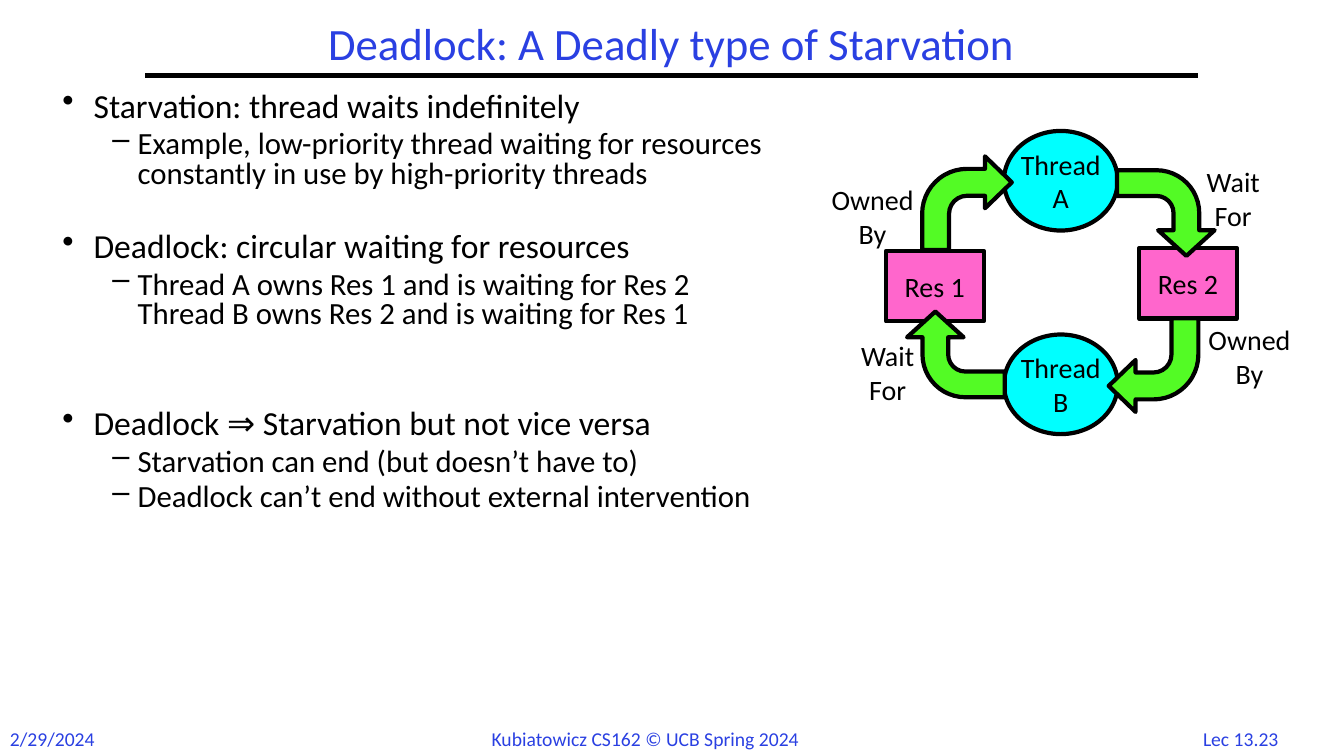
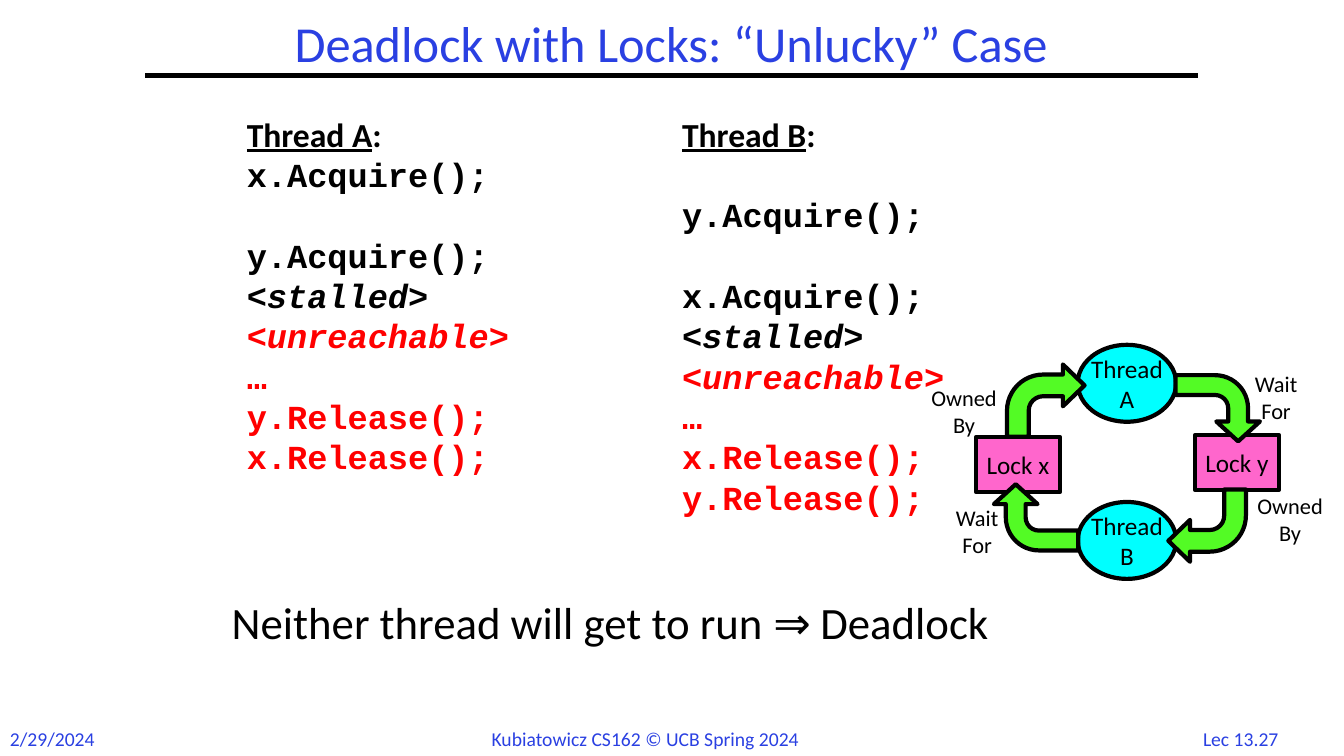
import pptx
import pptx.dml.color
import pptx.enum.shapes
import pptx.enum.text
import pptx.oxml.ns
import pptx.util
from lxml import etree

Cm = pptx.util.Cm
Pt = pptx.util.Pt
RGBColor = pptx.dml.color.RGBColor
SHAPE = pptx.enum.shapes.MSO_SHAPE
ALIGN = pptx.enum.text.PP_ALIGN
ANCHOR = pptx.enum.text.MSO_ANCHOR
qn = pptx.oxml.ns.qn

BLUE = RGBColor(0x2A, 0x40, 0xE2)
BLACK = RGBColor(0, 0, 0)
RED = RGBColor(0xFF, 0, 0)
PINK = RGBColor(0xFF, 0x66, 0xCC)
CYAN = RGBColor(0, 0xFF, 0xFF)
GREEN = RGBColor(0x53, 0xFB, 0x25)

TEXT_FONT = "Calibri"
CODE_FONT = "Courier New"
OUTLINE = Pt(3)
CODE_PITCH = Pt(28.8)

# Cycle diagram in cm, measured from the left of the first resource
# and the top of thread A: left, top, width, height
RESOURCE_BOXES = [(0, 3.02, 2.46, 1.78), (6.38, 2.95, 2.46, 1.78)]
THREAD_BOXES = [("A", (2.97, 0, 2.87, 2.51)), ("B", (2.97, 5.13, 2.87, 2.51))]
ARROWS = [
    (0, (0.91, 0.64, 2.26, 2.36)),
    (90, (5.82, 0.99, 2.46, 2.16)),
    (180, (5.61, 4.72, 2.26, 2.36)),
    (270, (0.53, 4.55, 2.46, 2.16)),
]
# Centres of the labels
LABELS = [
    ("Wait\nFor", 8.75, 1.69),
    ("Wait\nFor", 0.04, 6.08),
    ("Owned\nBy", 9.16, 5.68),
    ("Owned\nBy", -0.34, 2.15),
]
LABEL_WIDTH, LABEL_HEIGHT = 2.8, 1.96

# Text, level, space before in points
STARVATION_POINTS = [
    ("Starvation: thread waits indefinitely", 0, 4.8),
    ("Example, low-priority thread waiting for resources constantly in use "
     "by high-priority threads", 1, 4.4),
    ("Deadlock: circular waiting for resources", 0, 30.7),
    ("Thread A owns Res 1 and is waiting for Res 2\v"
     "Thread B owns Res 2 and is waiting for Res 1", 1, 4.4),
    ("Deadlock ⇒ Starvation but not vice versa", 0, 56.6),
    ("Starvation can end (but doesn’t have to)", 1, 4.4),
    ("Deadlock can’t end without external intervention", 1, 4.4),
]
# Bullet, size, left margin and hanging indent of each level
LEVELS = [("•", 24, Cm(0.79), Cm(0.79)), ("–", 22, Cm(1.9), Cm(0.64))]


def style_runs(paragraph, size, color=BLACK, font=TEXT_FONT, bold=False, italic=False):
    for run in paragraph.runs:
        run.font.size = Pt(size)
        run.font.name = font
        run.font.color.rgb = color
        run.font.bold = bold
        run.font.italic = italic


def write_text(shape, text, size, color=BLACK, align=ALIGN.CENTER, wrap=False):
    frame = shape.text_frame
    frame.text = text
    frame.word_wrap = wrap
    frame.vertical_anchor = ANCHOR.MIDDLE
    for paragraph in frame.paragraphs:
        paragraph.alignment = align
        style_runs(paragraph, size, color)


def add_text(slide, box, text, size, color=BLACK, align=ALIGN.LEFT):
    textbox = slide.shapes.add_textbox(*map(Cm, box))
    write_text(textbox, text, size, color, align, wrap=True)
    return textbox


def add_outlined(slide, kind, box, fill):
    shape = slide.shapes.add_shape(kind, *map(Cm, box))
    shape.shadow.inherit = False
    shape.fill.solid()
    shape.fill.fore_color.rgb = fill
    shape.line.color.rgb = BLACK
    shape.line.width = OUTLINE
    return shape


def add_bent_arrow(slide, box, rotation):
    """Add an arrow whose box is the area covered after rotation."""
    left, top, width, height = box
    sideways = rotation % 180 == 90
    if sideways:
        shift = (width - height) / 2
        left, top, width, height = left + shift, top - shift, height, width
    arrow = add_outlined(slide, SHAPE.BENT_ARROW, (left, top, width, height), GREEN)
    arrow.rotation = rotation
    half_head = 0.33 if sideways else 0.29
    for index, value in enumerate((0.3, half_head, 0.3, 0.5)):
        arrow.adjustments[index] = value


def add_cycle(slide, origin, scale, resources, node_size, label_size):
    def place(left, top, width, height):
        return (origin[0] + left * scale[0], origin[1] + top * scale[1],
                width * scale[0], height * scale[1])

    for name, box in zip(resources, RESOURCE_BOXES):
        resource = add_outlined(slide, SHAPE.RECTANGLE, place(*box), PINK)
        write_text(resource, name, node_size)
    for letter, box in THREAD_BOXES:
        thread = add_outlined(slide, SHAPE.OVAL, place(*box), CYAN)
        write_text(thread, f"Thread\n{letter}", node_size)
    for rotation, box in ARROWS:
        add_bent_arrow(slide, place(*box), rotation)
    for text, x, y in LABELS:
        box = place(x - LABEL_WIDTH / 2, y - LABEL_HEIGHT / 2, LABEL_WIDTH, LABEL_HEIGHT)
        add_text(slide, box, text, label_size, align=ALIGN.CENTER)


def add_bullets(slide, box, points):
    frame = slide.shapes.add_textbox(*map(Cm, box)).text_frame
    frame.word_wrap = True
    for index, (text, level, space) in enumerate(points):
        paragraph = frame.add_paragraph() if index else frame.paragraphs[0]
        bullet, size, margin, hanging = LEVELS[level]
        paragraph.text = text
        paragraph.level = level
        paragraph.line_spacing = 0.8
        paragraph.space_before = Pt(space)
        style_runs(paragraph, size)
        properties = paragraph._p.get_or_add_pPr()
        properties.set("marL", str(margin))
        properties.set("indent", str(-hanging))
        etree.SubElement(properties, qn("a:buChar")).set("char", bullet)


def add_code_column(slide, box, heading, code):
    """Write code lines given as text and whether an empty line precedes it."""
    frame = slide.shapes.add_textbox(*map(Cm, box)).text_frame
    frame.word_wrap = True
    title = frame.paragraphs[0]
    title.text = heading
    title.add_run().text = ":"
    style_runs(title, 24, bold=True)
    title.runs[0].font.underline = True
    title.line_spacing = CODE_PITCH

    color = BLACK
    for text, gap in code:
        if text == "<unreachable>":
            color = RED
        line = frame.add_paragraph()
        line.text = text
        line.line_spacing = CODE_PITCH
        if gap:
            line.space_before = CODE_PITCH
        style_runs(line, 24, color, CODE_FONT, bold=True, italic=text.startswith("<"))


def add_lecture_slide(deck, title, title_size, number):
    """Add a slide with the title, the rule below it and the footer."""
    slide = deck.slides.add_slide(deck.slide_layouts[6])
    heading = add_text(slide, (3.66, 0.43, 26.52, 1.47), title, title_size, BLUE, ALIGN.CENTER)
    heading.text_frame.paragraphs[0].line_spacing = 0.9

    rule = slide.shapes.add_connector(
        pptx.enum.shapes.MSO_CONNECTOR.STRAIGHT, Cm(3.66), Cm(1.9), Cm(30.2), Cm(1.9))
    rule.line.color.rgb = BLACK
    rule.line.width = OUTLINE
    etree.SubElement(rule._element.spPr, qn("a:effectLst"))

    for left, width, text, align in (
        (0, 4, "2/29/2024", ALIGN.LEFT),
        (12.14, 10, "Kubiatowicz CS162 © UCB Spring 2024", ALIGN.LEFT),
        (29.5, 3.54, f"Lec {number}", ALIGN.CENTER),
    ):
        add_text(slide, (left, 18.19, width, 0.85), text, 14, BLUE, align)
    return slide


def build_starvation(deck):
    slide = add_lecture_slide(deck, "Deadlock: A Deadly type of Starvation", 32, "13.23")
    add_bullets(slide, (1.32, 2.21, 20.09, 13.06), STARVATION_POINTS)
    add_cycle(slide, (22.33, 3.3), (1, 1), ("Res 1", "Res 2"), 20, 20)


def build_unlucky_case(deck):
    slide = add_lecture_slide(deck, "Deadlock with Locks: “Unlucky” Case", 36, "13.27")
    add_code_column(slide, (5.97, 2.74, 10.95, 9.5), "Thread A", [
        ("x.Acquire();", False),
        ("y.Acquire();", True),
        ("<stalled>", False),
        ("<unreachable>", False),
        ("…", False),
        ("y.Release();", False),
        ("x.Release();", False),
    ])
    add_code_column(slide, (16.94, 2.74, 11.48, 10.5), "Thread B", [
        ("y.Acquire();", True),
        ("x.Acquire();", True),
        ("<stalled>", False),
        ("<unreachable>", False),
        ("…", False),
        ("x.Release();", False),
        ("y.Release();", False),
    ])
    add_cycle(slide, (24.59, 8.69), (0.865, 0.772), ("Lock x", "Lock y"), 18, 16)
    add_text(slide, (5.59, 14.86, 21.23, 1.63), "Neither thread will get to run ⇒ Deadlock", 32)


def main():
    deck = pptx.Presentation()
    deck.slide_width = Cm(33.87)
    deck.slide_height = Cm(19.05)
    build_starvation(deck)
    build_unlucky_case(deck)
    deck.save("out.pptx")


if __name__ == "__main__":
    main()
